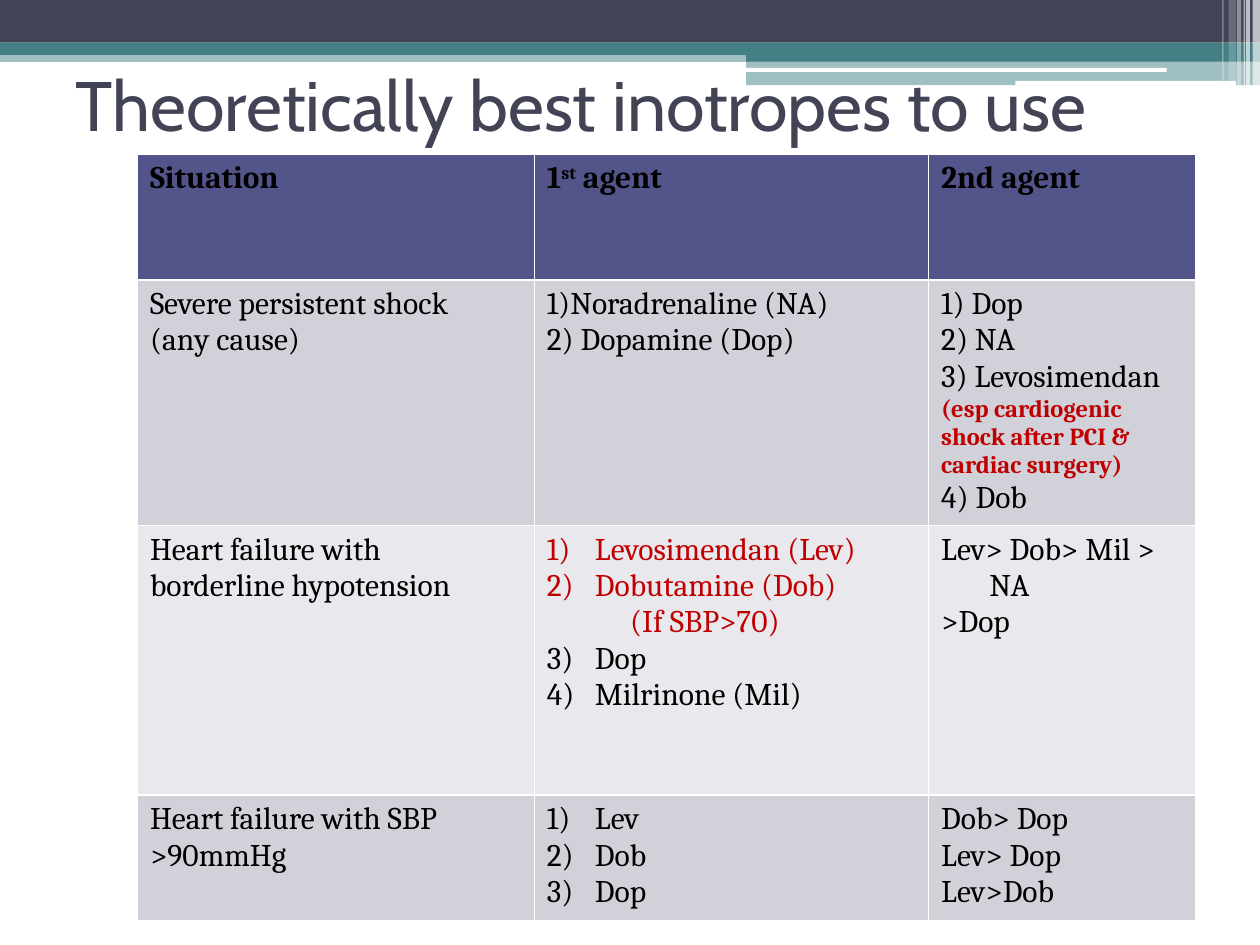
from lxml.etree import SubElement
from pptx import Presentation
from pptx.dml.color import RGBColor
from pptx.enum.shapes import MSO_SHAPE as Preset
from pptx.enum.text import MSO_ANCHOR as Anchor, MSO_AUTO_SIZE as AutoSize, PP_ALIGN as Align
from pptx.oxml.ns import qn
from pptx.util import Cm, Pt

COLORS = {
    "slate": "424456", "teal": "438086", "white": "FFFFFF", "black": "000000", "red": "C00000",
    "header": "53548A", "dark band": "D1D1DA", "light band": "E9E9ED",
}

TITLE = "Theoretically best inotropes to use"

BARS = [
    (0, 1.02, 25.4, 0.23, "teal", 50),
    (0, 0, 25.4, 0.86, "slate", 100),
    (0, 0.86, 25.4, 0.25, "teal", 100),
    (15.04, 0.99, 10.36, 0.25, "teal", 100),
    (15.04, 1.22, 10.36, 0.5, "teal", 50),
]
PILLS = [
    (15.01, 1.37, 8.51, 0.08, "white", 100),
    (20.47, 1.63, 4.45, 0.1, "white", 100),
]
STRIPES = [
    (25.25, 0.15, 1.73, 65), (25.12, 0.08, 1.73, 65), (25.07, 0.03, 1.73, 60),
    (24.94, 0.08, 1.73, 40), (24.77, 0.15, 1.63, 20), (24.64, 0.03, 1.63, 30),
]

COLUMN_WIDTHS = [8, 7.95, 5.38]
ROW_HEIGHTS = [2.54, 4.95, 5.44, 2.54]
ROW_FILLS = ["header", "dark band", "light band", "dark band"]
HANGING = 0.97

RED = {"color": "red"}
NOTE = {"color": "red", "size": 14, "bold": True}
ROWS = [
    [["Situation"], [("1st agent", {"superscript": "st"})], ["2nd agent"]],
    [
        ["Severe persistent shock", "(any cause)"],
        ["1)Noradrenaline (NA)", "2) Dopamine (Dop)"],
        ["1) Dop", "2) NA", "3) Levosimendan",
         ("(esp cardiogenic shock after PCI & cardiac surgery)", NOTE), "4) Dob"],
    ],
    [
        ["Heart failure with borderline hypotension"],
        [("Levosimendan (Lev)", {**RED, "start": 1}), ("Dobutamine (Dob)", {**RED, "start": 1}),
         ("(If SBP>70)", {**RED, "indent": 1.68}),
         ("Dop", {"start": 3}), ("Milrinone (Mil)", {"start": 3})],
        [("Lev> Dob> Mil > NA", {"hanging": True}), (">Dop", {"hanging": True})],
    ],
    [
        ["Heart failure with SBP >90mmHg"],
        [("Lev", {"start": 1}), ("Dob", {"start": 2}), ("Dop", {"start": 2})],
        ["Dob> Dop", "Lev> Dop", "Lev>Dob"],
    ],
]


def rgb(name):
    return RGBColor.from_string(COLORS[name])


def add_bar(page, preset, left, top, width, height, color, opacity):
    bar = page.shapes.add_shape(preset, Cm(left), Cm(top), Cm(width), Cm(height))
    bar.shadow.inherit = False
    bar.fill.solid()
    bar.fill.fore_color.rgb = rgb(color)
    bar.line.fill.background()
    if opacity < 100:
        tint = bar.element.spPr.find(".//" + qn("a:srgbClr"))
        SubElement(tint, qn("a:alpha"), val=str(opacity * 1000))


def style_span(span, font, size, color, bold=False):
    span.font.name = font
    span.font.size = Pt(size)
    span.font.color.rgb = rgb(color)
    span.font.bold = bold


def indent_para(para, left, first=0):
    properties = para._p.get_or_add_pPr()
    properties.set("marL", str(Cm(left)))
    properties.set("indent", str(Cm(first)))
    return properties


def write_line(para, text, options, header):
    raised = options.get("superscript")
    if raised:
        before, after = text.split(raised, 1)
        for piece in (before, raised, after):
            para.add_run().text = piece
        para.runs[1].font._element.set("baseline", "30000")
    else:
        para.text = text
    if "start" in options:
        properties = indent_para(para, HANGING, -HANGING)
        SubElement(properties, qn("a:buFont"), typeface="+mj-lt")
        SubElement(properties, qn("a:buAutoNum"), type="arabicParenR", startAt=str(options["start"]))
    elif "hanging" in options:
        indent_para(para, HANGING, -HANGING)
    elif "indent" in options:
        indent_para(para, options["indent"])
    for span in para.runs:
        style_span(span, "Cambria", options.get("size", 18),
                   options.get("color", "black"), options.get("bold", header))


def add_agent_table(page):
    frame = page.shapes.add_table(len(ROWS), len(COLUMN_WIDTHS), Cm(2.77), Cm(3.1),
                                  Cm(sum(COLUMN_WIDTHS)), Cm(sum(ROW_HEIGHTS)))
    table = frame.table
    for column, width in zip(table.columns, COLUMN_WIDTHS):
        column.width = Cm(width)
    for index, (row, height, fill) in enumerate(zip(table.rows, ROW_HEIGHTS, ROW_FILLS)):
        row.height = Cm(height)
        for cell, lines in zip(row.cells, ROWS[index]):
            cell.fill.solid()
            cell.fill.fore_color.rgb = rgb(fill)
            for number, line in enumerate(lines):
                text, options = (line, {}) if isinstance(line, str) else line
                box = cell.text_frame
                para = box.add_paragraph() if number else box.paragraphs[0]
                write_line(para, text, options, index == 0)


def place_title(page):
    title = page.shapes.title
    title.left, title.top, title.width, title.height = Cm(1.27), Cm(0.79), Cm(22.86), Cm(2.59)
    box = title.text_frame
    box.text = TITLE
    box.word_wrap = True
    box.auto_size = AutoSize.NONE
    box.vertical_anchor = Anchor.MIDDLE
    box.paragraphs[0].alignment = Align.LEFT
    style_span(box.paragraphs[0].runs[0], "Cabin", 40, "slate")
    title.element.getparent().append(title.element)


def main():
    deck = Presentation()
    deck.slide_width, deck.slide_height = Cm(25.4), Cm(19.05)
    page = deck.slides.add_slide(deck.slide_layouts[5])
    for bar in BARS:
        add_bar(page, Preset.RECTANGLE, *bar)
    for pill in PILLS:
        add_bar(page, Preset.ROUNDED_RECTANGLE, *pill)
    for left, width, height, opacity in STRIPES:
        add_bar(page, Preset.RECTANGLE, left, 0, width, height, "white", opacity)
    place_title(page)
    add_agent_table(page)
    deck.save("out.pptx")


if __name__ == "__main__":
    main()
